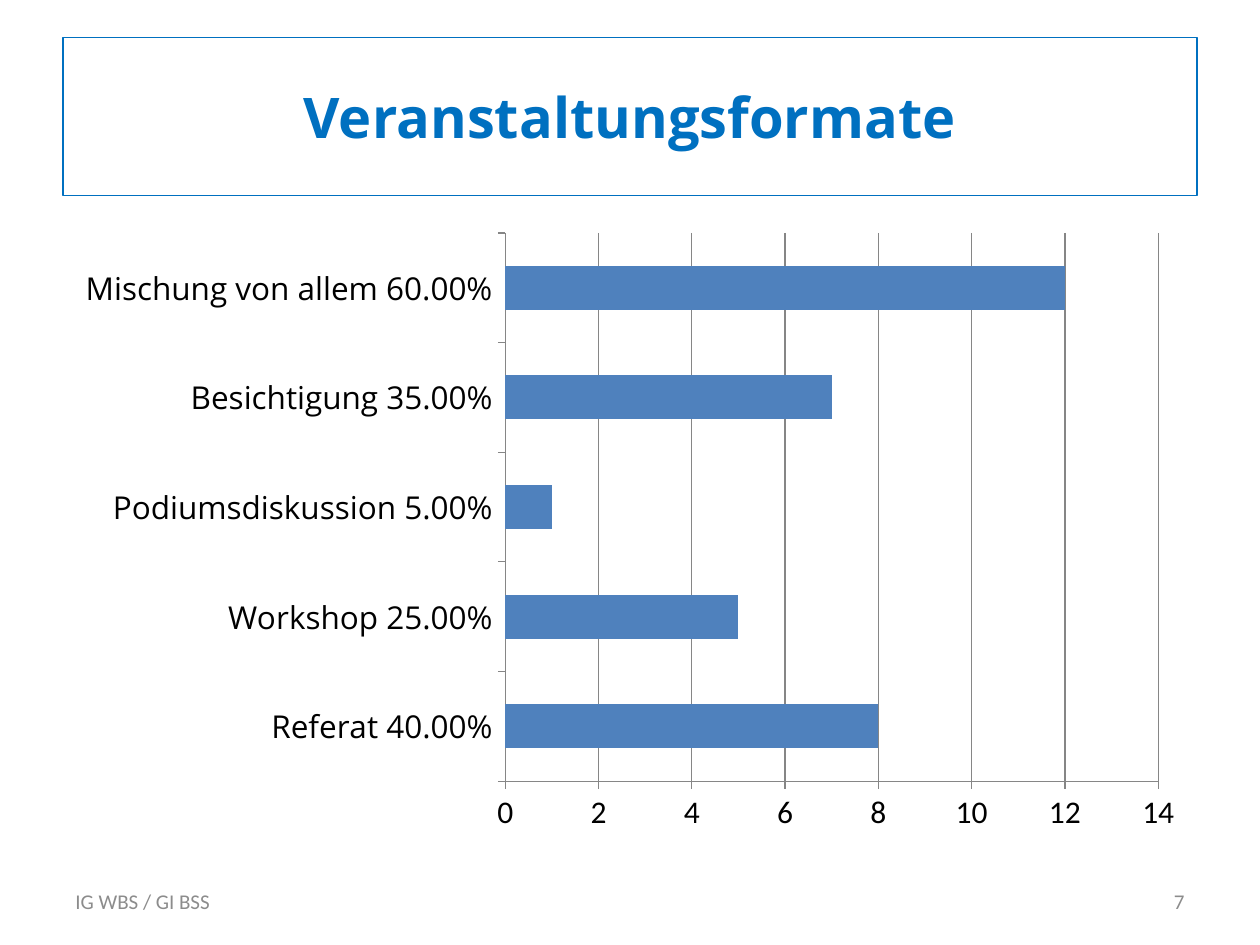
from pptx import Presentation
from pptx.chart.data import CategoryChartData as ChartData
from pptx.dml.color import RGBColor
from pptx.enum.chart import XL_CHART_TYPE as Kind, XL_TICK_MARK as Tick
from pptx.enum.text import MSO_ANCHOR as Anchor, PP_ALIGN as Align
from pptx.util import Pt

TITLE = "Veranstaltungsformate"
BARS = [
    ("Referat 40.00%", 8),
    ("Workshop 25.00%", 5),
    ("Podiumsdiskussion 5.00%", 1),
    ("Besichtigung 35.00%", 7),
    ("Mischung von allem 60.00%", 12),
]
FOOT = "IG WBS / GI BSS"
PAGE = "7"

WIDE, HIGH, EDGE = 720, 540, 36
FULL = WIDE - 2 * EDGE
FOOT_W = 168
BLUE, GREY, BAR, AXIS = "0070C0", "8C8C8C", "4F81BD", "868686"


def color(code):
    return RGBColor.from_string(code)


def style(font, name, size, code, bold=False):
    font.name, font.size, font.bold = name, Pt(size), bold
    font.color.rgb = color(code)


def add_text(slide, text, box, align, *look):
    shape = slide.shapes.add_textbox(*map(Pt, box))
    frame = shape.text_frame
    frame.text = text
    frame.word_wrap = True
    frame.vertical_anchor = Anchor.MIDDLE
    para = frame.paragraphs[0]
    para.alignment = align
    style(para.runs[0].font, *look)
    return shape


def draw_line(line, code):
    line.color.rgb = color(code)
    line.width = Pt(0.75)


def add_bars(slide, box):
    data = ChartData()
    data.categories = [name for name, _ in BARS]
    data.add_series("Series 1", [val for _, val in BARS])
    chart = slide.shapes.add_chart(Kind.BAR_CLUSTERED, *map(Pt, box), data).chart
    chart.has_legend = chart.has_title = False
    style(chart.font, "Calibri", 18, "000000")
    plot = chart.plots[0]
    plot.gap_width = 150
    plot.vary_by_categories = False
    fill = plot.series[0].format.fill
    fill.solid()
    fill.fore_color.rgb = color(BAR)
    cat, val = chart.category_axis, chart.value_axis
    for axis in (cat, val):
        axis.major_tick_mark = Tick.OUTSIDE
        axis.minor_tick_mark = Tick.NONE
        draw_line(axis.format.line, AXIS)
    style(cat.tick_labels.font, "Open Sans", 18, "000000")
    val.minimum_scale, val.maximum_scale, val.major_unit = 0, 14, 2
    val.has_major_gridlines = True
    draw_line(val.major_gridlines.format.line, AXIS)


def main():
    deck = Presentation()
    deck.slide_width, deck.slide_height = Pt(WIDE), Pt(HIGH)
    slide = deck.slides.add_slide(deck.slide_layouts[6])
    title = add_text(slide, TITLE, (EDGE, 21.6, FULL, 90), Align.CENTER,
                     "Open Sans", 32, BLUE, True)
    draw_line(title.line, BLUE)
    add_bars(slide, (EDGE, 126, FULL, 356.4))
    for text, left, align in (
        (FOOT, EDGE, Align.LEFT),
        (PAGE, WIDE - EDGE - FOOT_W, Align.RIGHT),
    ):
        add_text(slide, text, (left, 500.4, FOOT_W, 28.8), align,
                 "Calibri", 12, GREY)
    deck.save("out.pptx")


if __name__ == "__main__":
    main()
